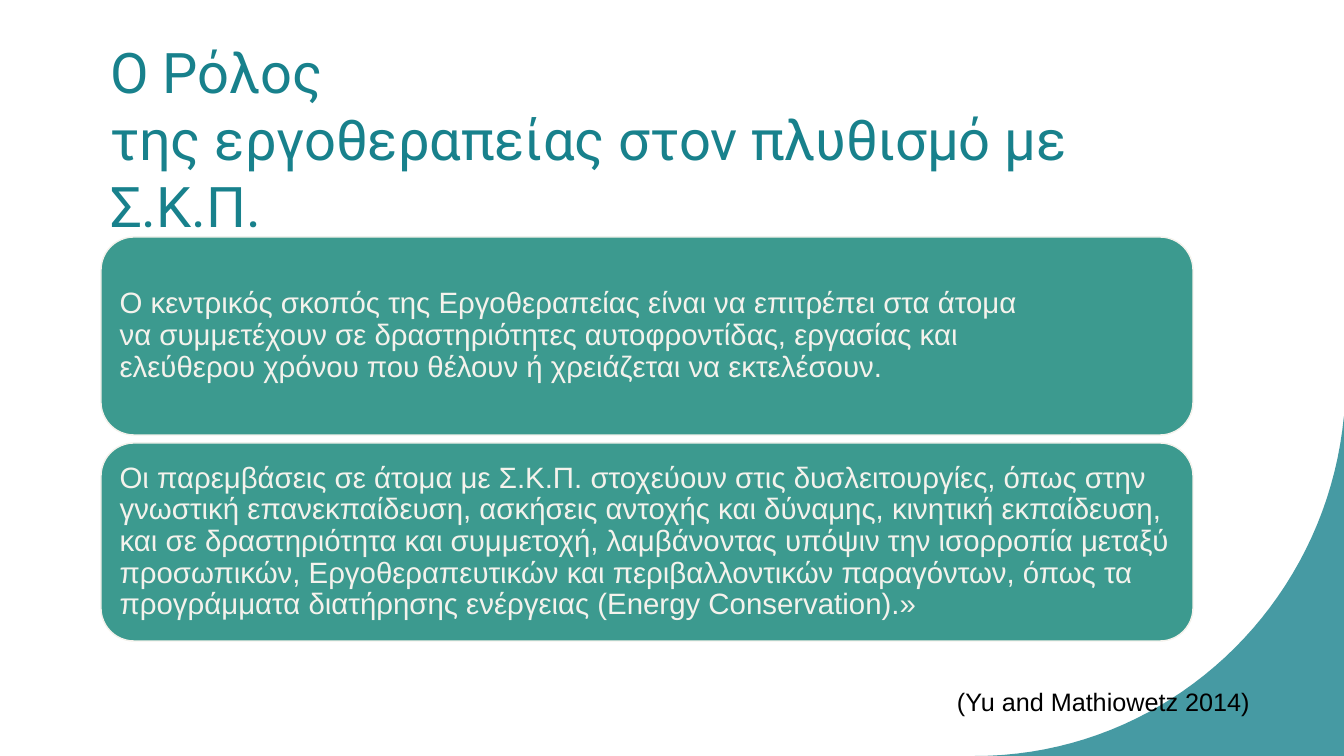
from pptx import Presentation
from pptx.dml.color import RGBColor as Rgb
from pptx.enum.shapes import MSO_SHAPE as Kind
from pptx.enum.text import MSO_ANCHOR as Anchor, PP_ALIGN as Align
from pptx.oxml.ns import qn
from pptx.util import Pt
from lxml.etree import SubElement as Sub

TITLE = "Ο Ρόλος της~εργοθεραπείας~στον~πλυθισμό~με Σ.Κ.Π."
CARDS = [
    "Ο κεντρικός σκοπός της~Εργοθεραπείας~είναι να επιτρέπει στα άτομα "
    "να~συμμετέχουν σε δραστηριότητες~αυτοφροντίδας, εργασίας και "
    "ελεύθερου~χρόνου που θέλουν ή χρειάζεται να εκτελέσουν.",
    "Οι παρεμβάσεις σε άτομα με Σ.Κ.Π. στοχεύουν στις δυσλειτουργίες, "
    "όπως~στην γνωστική επανεκπαίδευση, ασκήσεις αντοχής και δύναμης, "
    "κινητική~εκπαίδευση, και σε δραστηριότητα και συμμετοχή, "
    "λαμβάνοντας υπόψιν~την ισορροπία μεταξύ προσωπικών,~Εργοθεραπευτικών~"
    "και~περιβαλλοντικών παραγόντων, όπως τα προγράμματα "
    "διατήρησης~ενέργειας (Εnergy~Conservation).»",
]
CITE = "(Yu and~Mathiowetz 2014)"
CURVE = [(975, 756), (1167, 756), (1326, 607), (1344, 416)]
STEPS = 40

TEAL = Rgb(0x18, 0x81, 0x8C)
GREEN = Rgb(0x3C, 0x9A, 0x8F)
CREAM = Rgb(0xF4, 0xF2, 0xEC)
BLACK = Rgb(0, 0, 0)

WIDE, HIGH = 1344, 756
LEFT, SPAN = 101, 1092
TOP, TALL, GAP = 237, 198, 8
NBSP = chr(160)


def px(num):
    return round(num * 9071.43)


def write(shape, text, size, color, font="Arial", anchor=Anchor.TOP,
          side=10, edge=5, lead=1.0):
    frame = shape.text_frame
    frame.word_wrap = True
    frame.vertical_anchor = anchor
    frame.margin_left = frame.margin_right = px(side)
    frame.margin_top = frame.margin_bottom = px(edge)
    para = frame.paragraphs[0]
    para.alignment = Align.LEFT
    para.line_spacing = lead
    run = para.add_run()
    run.text = text.replace("~", NBSP)
    run.font.name = font
    run.font.size = Pt(size)
    run.font.color.rgb = color


def bezier(t):
    u = 1 - t
    parts = (u ** 3, 3 * u * u * t, 3 * u * t * t, t ** 3)
    return tuple(px(sum(k * p[i] for k, p in zip(parts, CURVE)))
                 for i in (0, 1))


deck = Presentation()
deck.slide_width, deck.slide_height = px(WIDE), px(HIGH)
slide = deck.slides.add_slide(deck.slide_layouts[6])
shapes = slide.shapes

arc = [bezier(i / STEPS) for i in range(STEPS + 1)]
path = shapes.build_freeform(*arc[0])
path.add_line_segments(arc[1:] + [(px(WIDE), px(HIGH))], close=True)
corner = path.convert_to_shape()
corner.shadow.inherit = False
corner.fill.solid()
corner.fill.fore_color.rgb = TEAL
corner.line.fill.background()
tint = corner.fill._xPr.find(qn("a:solidFill"))[0]
Sub(tint, qn("a:alpha"), val="80000")

head = shapes.add_textbox(px(100), px(65), px(SPAN), px(146))
write(head, TITLE, 40, TEAL, font="Roboto", anchor=Anchor.MIDDLE)

for row, text in enumerate(CARDS):
    top = TOP + row * (TALL + GAP)
    card = shapes.add_shape(Kind.ROUNDED_RECTANGLE, px(LEFT), px(top),
                            px(SPAN), px(TALL))
    card.shadow.inherit = False
    card.fill.solid()
    card.fill.fore_color.rgb = GREEN
    card.line.color.rgb = CREAM
    card.line.width = Pt(1)
    write(card, text, 21, CREAM, anchor=Anchor.MIDDLE, side=9, edge=9,
          lead=0.9)

cite = shapes.add_textbox(px(947), px(681), px(363), px(40))
write(cite, CITE, 18, BLACK)

deck.save("out.pptx")
